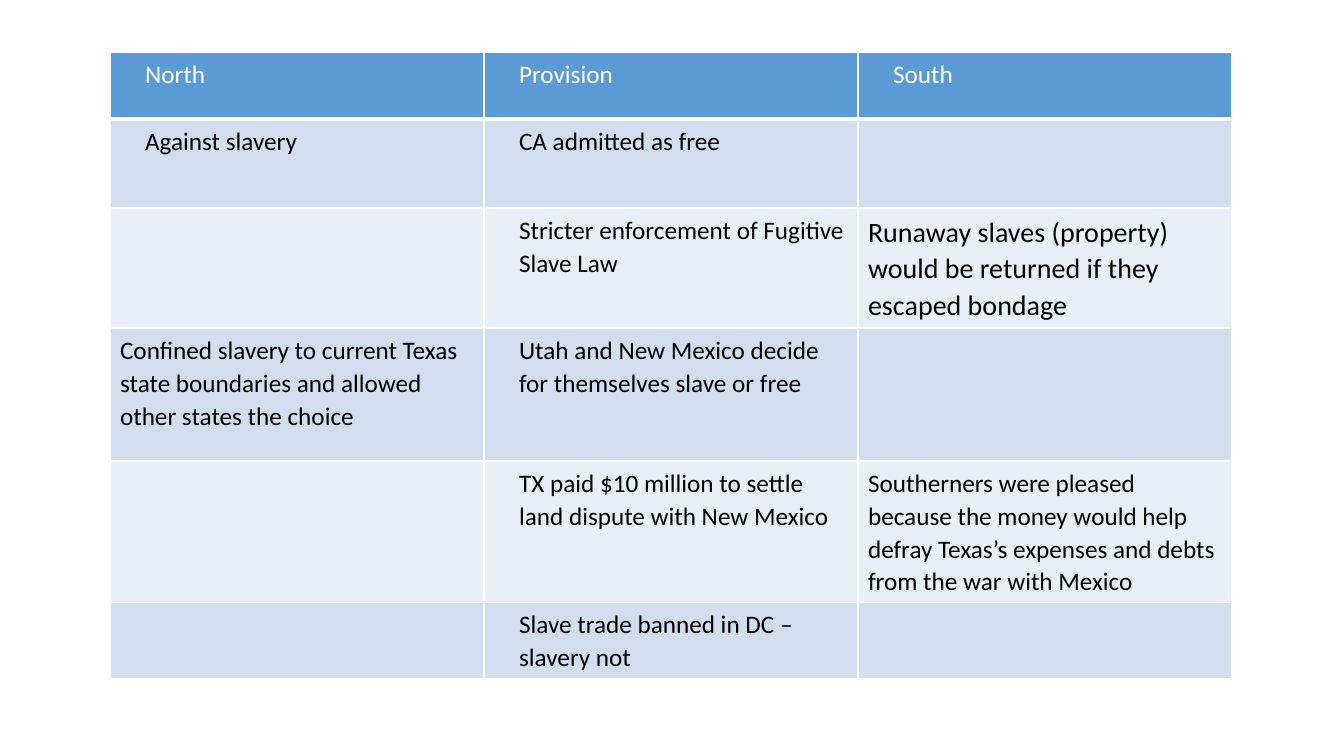
"""Build a slide with a table of compromise provisions and the side each favoured."""
from dataclasses import dataclass

from lxml.etree import SubElement
from pptx import Presentation
from pptx.dml.color import RGBColor
from pptx.oxml.ns import qn
from pptx.table import _Cell as Cell
from pptx.util import Emu, Pt

EMU_PER_PX = 914400 / 100.8
COLORS = {
    "header": "5B9BD5",
    "odd": "D2DEEF",
    "even": "EAEFF7",
    "border": "FFFFFF",
    "header_text": "FFFFFF",
    "body_text": "000000",
}
LEFT, TOP, COLUMN_WIDTH = 110, 52, 374
INDENT = 25


@dataclass(frozen=True)
class Entry:
    text: str = ""
    indented: bool = True
    size: int = 18


@dataclass(frozen=True)
class Row:
    height: int
    north: Entry
    provision: Entry
    south: Entry


EMPTY = Entry()
ROWS = [
    Row(67, Entry("North"), Entry("Provision"), Entry("South")),
    Row(89, Entry("Against slavery"), Entry("CA admitted as free"), EMPTY),
    Row(118, EMPTY, Entry("Stricter enforcement of Fugitive Slave Law"),
        Entry("Runaway slaves (property) would be returned if they escaped bondage",
              indented=False, size=20)),
    Row(133,
        Entry("Confined slavery to current Texas state boundaries and allowed "
              "other states the choice", indented=False),
        Entry("Utah and New Mexico decide for themselves slave or free"), EMPTY),
    Row(137, EMPTY, Entry("TX paid $10 million to settle land dispute with New Mexico"),
        Entry("Southerners were pleased because the money would help defray Texas’s "
              "expenses and debts from the war with Mexico", indented=False)),
    Row(71, EMPTY, Entry("Slave trade banned in DC – slavery not"), EMPTY),
]


def px(length: int) -> Emu:
    return Emu(round(length * EMU_PER_PX))


def color(name: str) -> RGBColor:
    return RGBColor.from_string(COLORS[name])


def draw_borders(cell: Cell, bottom_width: int) -> None:
    properties = cell._tc.get_or_add_tcPr()
    widths = {"a:lnL": 1, "a:lnR": 1, "a:lnT": 1, "a:lnB": bottom_width}
    for tag, width in widths.items():
        line = SubElement(properties, qn(tag), w=str(Pt(width)))
        fill = SubElement(line, qn("a:solidFill"))
        SubElement(fill, qn("a:srgbClr"), val=COLORS["border"])


def write_entry(cell: Cell, entry: Entry, text_color: str) -> None:
    para = cell.text_frame.paragraphs[0]
    para.font.name = "Calibri"
    para.font.size = Pt(entry.size)
    para.font.bold = False
    para.font.color.rgb = color(text_color)
    para.line_spacing = 1.07
    if entry.indented:
        para.space_after = Pt(8)
        para._p.get_or_add_pPr().set("marL", str(px(INDENT)))
    if entry.text:
        para.add_run().text = entry.text


def fill_row(cells: list[Cell], row: Row, index: int) -> None:
    header = index == 0
    band = "header" if header else "odd" if index % 2 else "even"
    for cell, entry in zip(cells, (row.north, row.provision, row.south)):
        draw_borders(cell, 3 if header else 1)
        cell.fill.solid()
        cell.fill.fore_color.rgb = color(band)
        write_entry(cell, entry, "header_text" if header else "body_text")


def main() -> None:
    deck = Presentation()
    deck.slide_width, deck.slide_height = px(1344), px(756)
    page = deck.slides.add_slide(deck.slide_layouts[6])
    height = sum(row.height for row in ROWS)
    table = page.shapes.add_table(
        len(ROWS), 3, px(LEFT), px(TOP), px(3 * COLUMN_WIDTH), px(height)
    ).table
    for column in table.columns:
        column.width = px(COLUMN_WIDTH)
    for index, row in enumerate(ROWS):
        table.rows[index].height = px(row.height)
        fill_row(list(table.rows[index].cells), row, index)
    deck.save("out.pptx")


if __name__ == "__main__":
    main()
